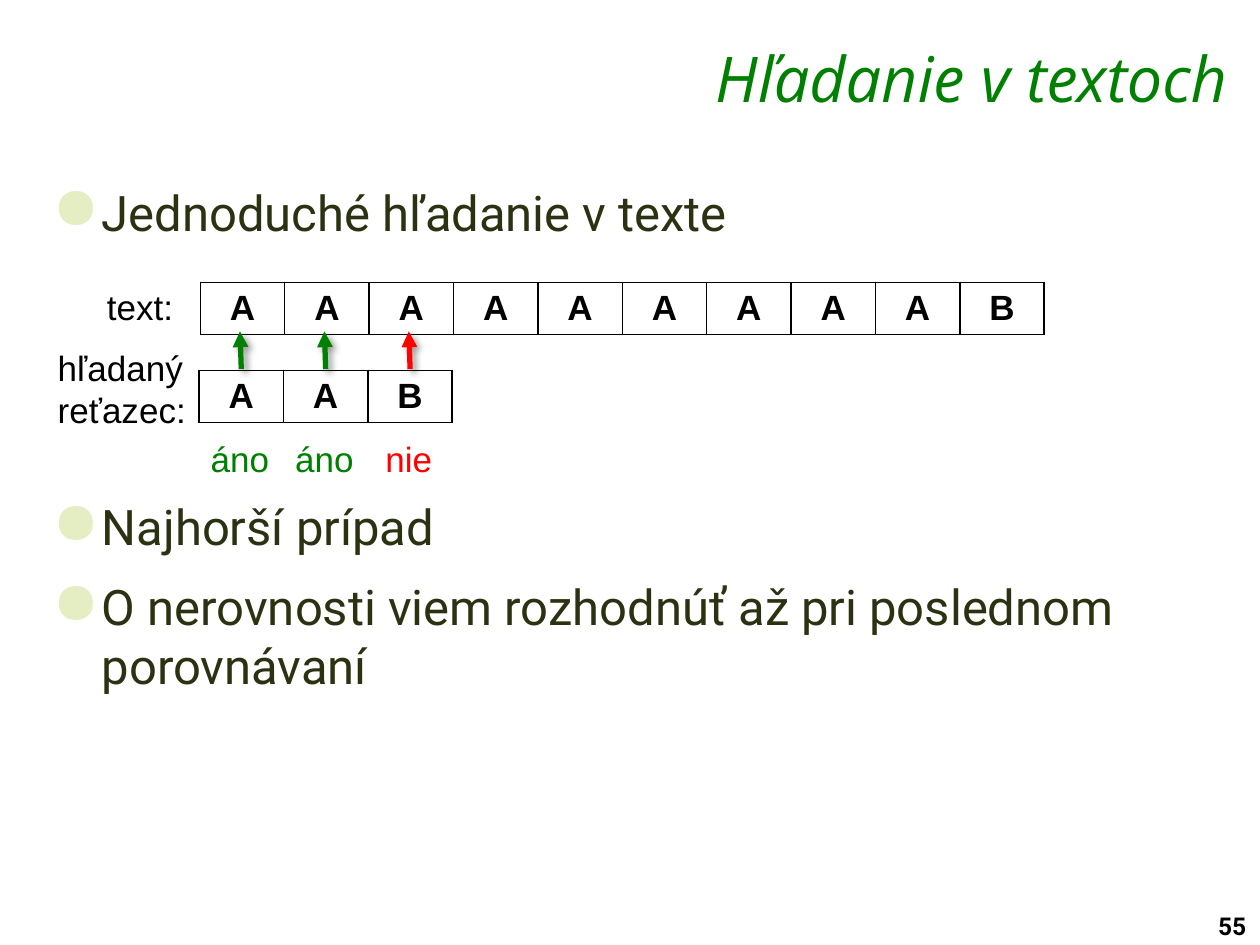
from pptx import Presentation
from pptx.dml.color import RGBColor
from pptx.enum.shapes import MSO_CONNECTOR
from pptx.enum.text import MSO_ANCHOR, PP_ALIGN
from pptx.oxml import parse_xml
from pptx.oxml.ns import nsdecls
from pptx.util import Inches, Pt

TITLE = "Hľadanie v textoch"
POINTS = [
    ("Jednoduché hľadanie v texte", 0),
    ("Najhorší prípad", 140),
    ("O nerovnosti viem rozhodnúť až pri poslednom porovnávaní", 6),
]
TEXT = "AAAAAAAAAB"
WORD = "AAB"
NAMES = [
    ("text:", (0.75, 2.22, 0.73, 0.44)),
    ("hľadaný\nreťazec:", (0.36, 2.7, 1.25, 0.77)),
]
TESTS = [("áno", "yes"), ("áno", "yes"), ("nie", "no")]
PAGE = "55"

THEME = {
    "black": "000000", "white": "FFFFFF", "body": "2B3212", "dot": "E5EEC2",
    "yes": "008000", "no": "FF0000",
    "head": "Open Sans", "main": "Roboto", "plain": "Arial",
    "big": 36, "mid": 28, "small": 20, "tiny": 14,
}
CELL, HIGH = 0.67, 0.41
LEFT, TOP = 1.58, 2.94


def rgb(name):
    return RGBColor.from_string(THEME[name])


def node(body):
    head, rest = body.split(" ", 1)
    return parse_xml(f"{head} {nsdecls('a')} {rest}")


def write(frame, text, font="plain", size="small", color="black", bold=False,
          slant=False, align=PP_ALIGN.LEFT, wrap=False, gaps=None):
    frame.word_wrap = wrap
    for i, line in enumerate(text.split("\n")):
        para = frame.paragraphs[0] if i == 0 else frame.add_paragraph()
        para.alignment = align
        if gaps:
            bullet(para, gaps[i])
        run = para.add_run()
        run.text = line
        face = run.font
        face.name, face.size = THEME[font], Pt(THEME[size])
        face.bold, face.italic = bold, slant
        face.color.rgb = rgb(color)


def bullet(para, gap):
    props = para._p.get_or_add_pPr()
    props.set("marL", str(Inches(0.39)))
    props.set("indent", str(-Inches(0.39)))
    para.space_before, para.space_after = Pt(gap), Pt(6)
    props.append(node(f'<a:buClr ><a:srgbClr val="{THEME["dot"]}"/></a:buClr>'))
    props.append(node('<a:buSzPct val="120000"/>'))
    props.append(node('<a:buChar char="●"/>'))


def box(slide, place):
    return slide.shapes.add_textbox(*map(Inches, place)).text_frame


def strip(slide, marks, left, top):
    count = len(marks)
    grid = slide.shapes.add_table(1, count, Inches(left), Inches(top),
                                  Inches(CELL * count), Inches(HIGH)).table
    grid.first_row = grid.horz_banding = False
    for i, mark in enumerate(marks):
        grid.columns[i].width = Inches(CELL)
        cell = grid.cell(0, i)
        cell.margin_top = cell.margin_bottom = Inches(0.04)
        cell.vertical_anchor = MSO_ANCHOR.MIDDLE
        cell.fill.solid()
        cell.fill.fore_color.rgb = rgb("white")
        props = cell._tc.get_or_add_tcPr()
        for n, side in enumerate("LRTB"):
            props.insert(n, node(
                f'<a:ln{side} w="{Pt(1)}"><a:solidFill><a:srgbClr '
                f'val="{THEME["black"]}"/></a:solidFill></a:ln{side}>'))
        write(cell.text_frame, mark, bold=True, align=PP_ALIGN.CENTER, wrap=True)


def arrow(slide, mid, color):
    line = slide.shapes.add_connector(
        MSO_CONNECTOR.STRAIGHT, Inches(mid), Inches(TOP - 0.01),
        Inches(mid - 0.01), Inches(TOP - 0.31))
    line.line.color.rgb = rgb(color)
    line.line.width = Pt(3)
    line.line._get_or_add_ln().append(node('<a:tailEnd type="triangle"/>'))
    line._element.spPr.append(node(
        f'<a:effectLst ><a:outerShdw blurRad="{Pt(4)}" dist="{Pt(3)}" '
        f'dir="2700000" rotWithShape="0"><a:srgbClr val="{THEME["black"]}">'
        '<a:alpha val="40000"/></a:srgbClr></a:outerShdw></a:effectLst>'))


def main():
    deck = Presentation()
    deck.slide_width, deck.slide_height = Inches(10), Inches(7.5)
    slide = deck.slides.add_slide(deck.slide_layouts[6])

    write(box(slide, (9.57, 7.18, 0.43, 0.32)), PAGE, font="main", size="tiny",
          bold=True)
    head = box(slide, (2.29, 0.31, 7.55, 0.58))
    head.margin_top = 0
    write(head, TITLE, font="head", size="big", color="yes", slant=True,
          align=PP_ALIGN.RIGHT, wrap=True)
    lines, gaps = zip(*POINTS)
    write(box(slide, (0.32, 1.4, 9.38, 5.8)), "\n".join(lines), font="main",
          size="mid", color="body", wrap=True, gaps=gaps)

    strip(slide, TEXT, LEFT + 0.01, 2.24)
    strip(slide, WORD, LEFT, TOP)
    for name, place in NAMES:
        write(box(slide, place), name)
    for i, (word, color) in enumerate(TESTS):
        left = LEFT + i * CELL
        arrow(slide, left + CELL / 2, color)
        write(box(slide, (left - 0.01, 3.42, CELL, 0.44)), word, color=color,
              align=PP_ALIGN.CENTER)
    deck.save("out.pptx")


if __name__ == "__main__":
    main()
